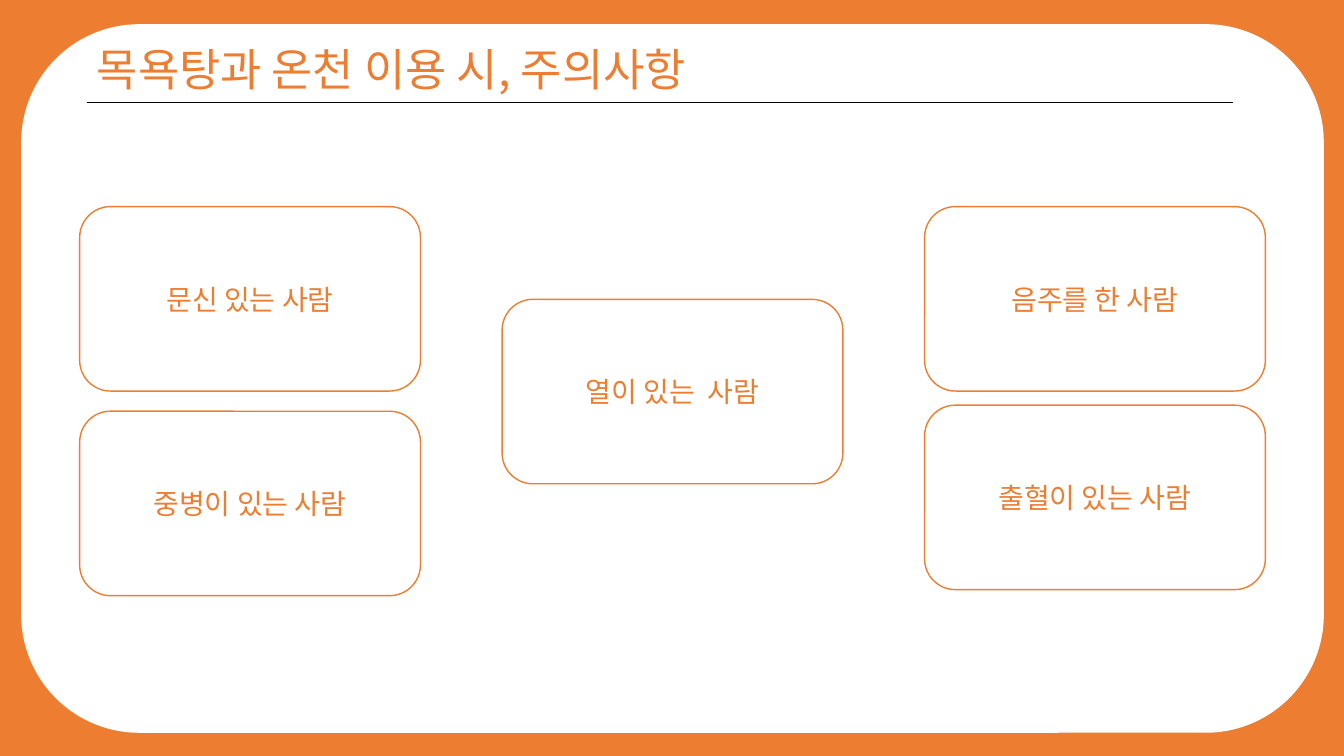
from lxml import etree
from pptx import Presentation
from pptx import util as u
from pptx.dml.color import RGBColor
from pptx.enum import shapes, text
from pptx.oxml.ns import qn

FONT = "Noto Sans CJK KR"
ORANGE, WHITE, BLACK = "ED7D31", "FFFFFF", "000000"


def color(value):
    return RGBColor.from_string(value)


class SlideBuilder:
    def __init__(self, page, accent):
        self.page = page
        self.accent = accent

    def background(self):
        fill = self.page.background.fill
        fill.solid()
        fill.fore_color.rgb = color(self.accent)

    def label(self, shape, wording, size, align, anchor):
        frame = shape.text_frame
        frame.text = wording
        frame.word_wrap = True
        frame.vertical_anchor = anchor
        para = frame.paragraphs[0]
        para.alignment = align
        para.font.size = u.Pt(size)
        para.font.name = FONT
        para.font.color.rgb = color(self.accent)
        for properties in shape.element.iter(qn("a:defRPr")):
            etree.SubElement(properties, qn("a:ea"), typeface=FONT)

    def panel(self, left, top, width, height):
        panel = self.page.shapes.add_shape(
            shapes.MSO_SHAPE.ROUNDED_RECTANGLE,
            u.Inches(left), u.Inches(top), u.Inches(width), u.Inches(height))
        panel.shadow.inherit = False
        panel.fill.solid()
        panel.fill.fore_color.rgb = color(WHITE)
        panel.line.fill.background()
        return panel

    def card(self, left, top, wording):
        card = self.panel(left, top, 3.38, 1.83)
        card.line.color.rgb = color(self.accent)
        card.line.width = u.Pt(1)
        self.label(card, wording, 20, text.PP_ALIGN.CENTER, text.MSO_ANCHOR.MIDDLE)

    def rule(self, left, right, top):
        rule = self.page.shapes.add_connector(
            shapes.MSO_CONNECTOR.STRAIGHT,
            u.Inches(left), u.Inches(top), u.Inches(right), u.Inches(top))
        rule.line.color.rgb = color(BLACK)
        rule.line.width = u.Pt(0.5)
        etree.SubElement(rule.element.spPr, qn("a:effectLst"))

    def title(self, left, top, width, height, wording):
        title = self.page.shapes.title
        title.left, title.top = u.Inches(left), u.Inches(top)
        title.width, title.height = u.Inches(width), u.Inches(height)
        self.label(title, wording, 32, text.PP_ALIGN.LEFT, text.MSO_ANCHOR.TOP)
        title.text_frame.auto_size = text.MSO_AUTO_SIZE.SHAPE_TO_FIT_TEXT
        title.element.getparent().append(title.element)


def main():
    deck = Presentation()
    deck.slide_width, deck.slide_height = u.Inches(13.33), u.Inches(7.5)
    builder = SlideBuilder(deck.slides.add_slide(deck.slide_layouts[5]), ORANGE)
    builder.background()
    builder.panel(0.21, 0.24, 12.92, 7.03)
    builder.rule(0.86, 12.23, 1.02)
    builder.title(0.86, 0.36, 6.85, 0.64, "목욕탕과 온천 이용 시, 주의사항")

    columns = [
        [(2.05, "문신 있는 사람"), (4.08, "중병이 있는 사람")],
        [(2.97, "열이 있는  사람")],
        [(2.05, "음주를 한 사람"), (4.02, "출혈이 있는 사람")],
    ]
    for index, cards in enumerate(columns):
        for top, wording in cards:
            builder.card(0.79 + 4.19 * index, top, wording)

    deck.save("out.pptx")


if __name__ == "__main__":
    main()
